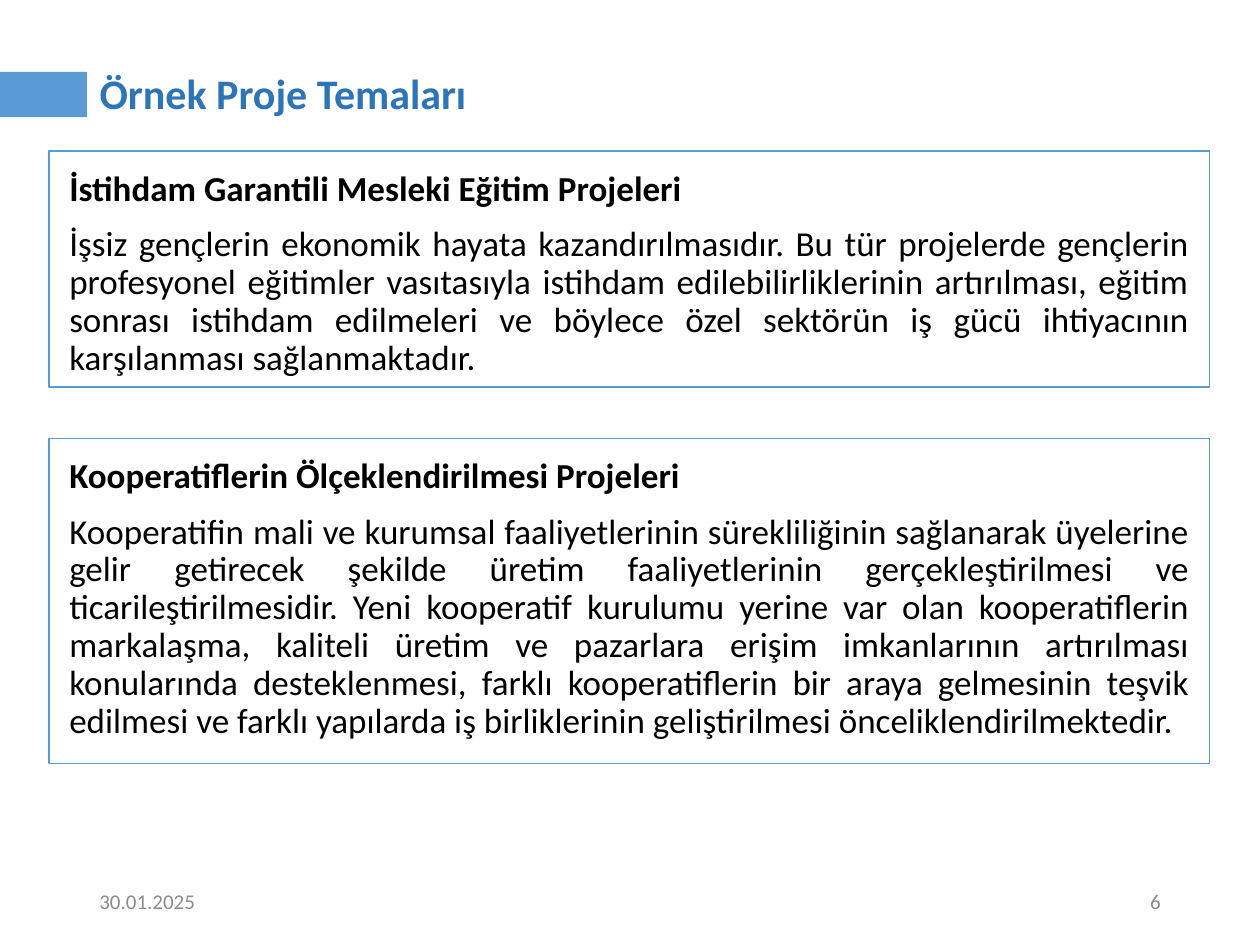
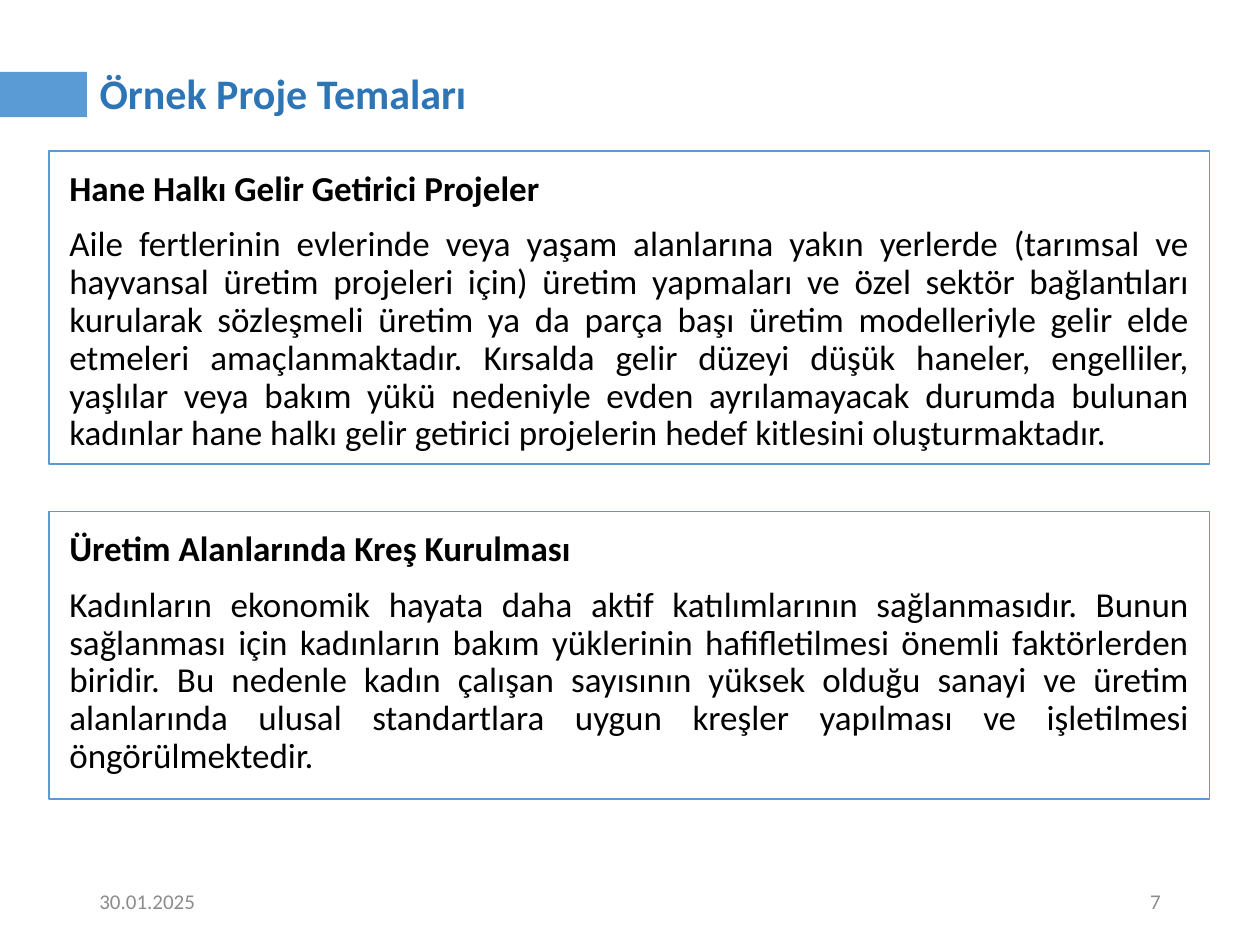
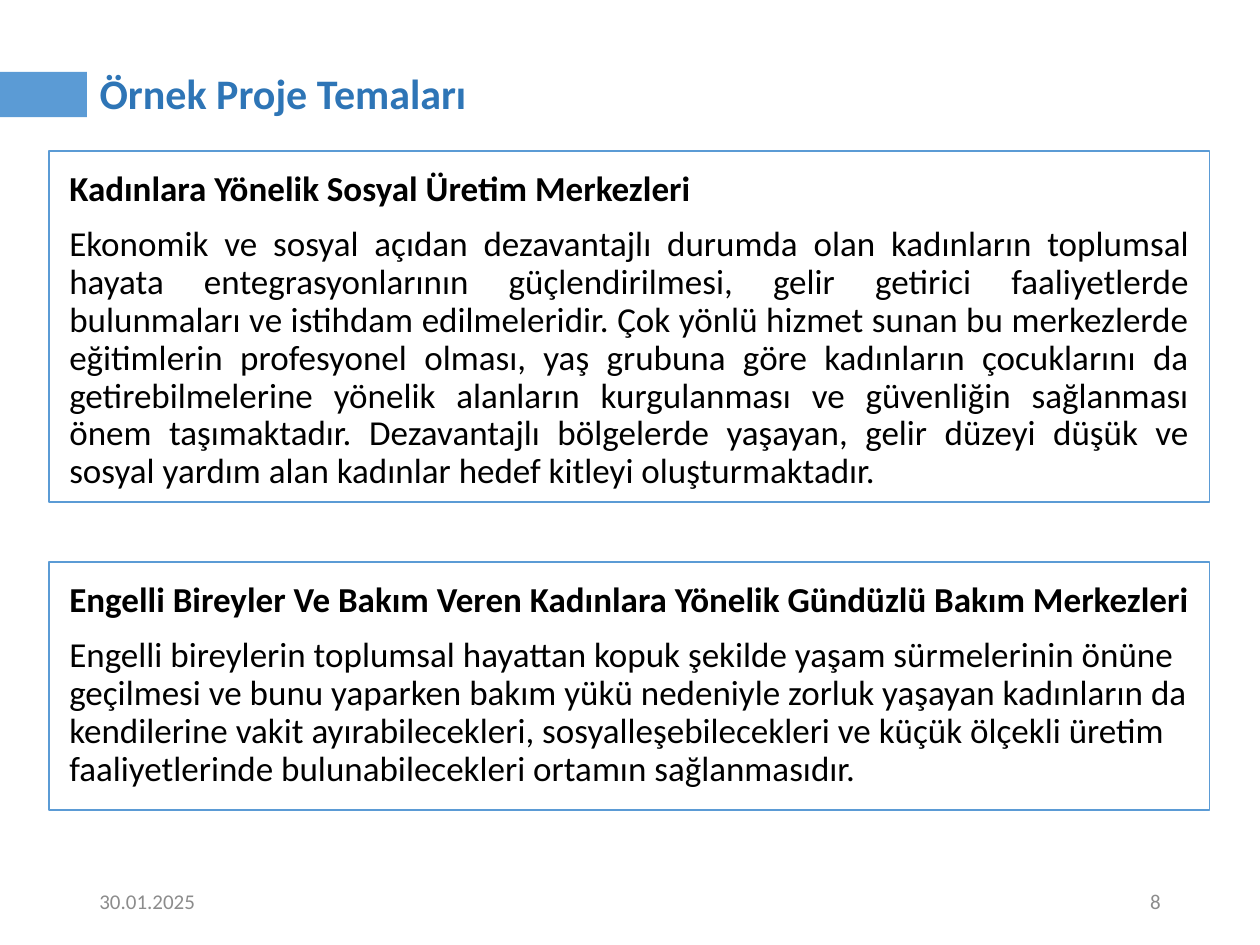
from dataclasses import dataclass

from lxml.etree import SubElement
from pptx import Presentation
from pptx.dml.color import RGBColor as RGB
from pptx.enum.shapes import MSO_SHAPE as Kind
from pptx.enum.text import MSO_ANCHOR as Anchor, MSO_AUTO_SIZE as Fit, PP_ALIGN as Align
from pptx.oxml.ns import qn
from pptx.util import Inches, Pt


@dataclass(frozen=True)
class Theme:
    font: str = "Calibri"
    blue: RGB = RGB(0x5B, 0x9B, 0xD5)
    deep: RGB = RGB(0x2E, 0x75, 0xB6)
    gray: RGB = RGB(0x8C, 0x8C, 0x8C)
    black: RGB = RGB(0, 0, 0)
    white: RGB = RGB(255, 255, 255)
    head: Pt = Pt(24)
    text: Pt = Pt(20)
    foot: Pt = Pt(12)
    inset: Inches = Inches(0.16)


LOOK = Theme()
TITLE = "Örnek Proje Temaları"
DATE = "30.01.2025"
FIRST = 6

# Each card: top, height, heading, text, alignment of the text
DECK = [
    [
        (1.2, 1.97, "İstihdam Garantili Mesleki Eğitim Projeleri",
         "İşsiz gençlerin ekonomik hayata kazandırılmasıdır. Bu tür projelerde "
         "gençlerin profesyonel eğitimler vasıtasıyla istihdam edilebilirliklerinin "
         "artırılması, eğitim sonrası istihdam edilmeleri ve böylece özel sektörün "
         "iş gücü ihtiyacının karşılanması sağlanmaktadır.", Align.JUSTIFY),
        (3.48, 2.58, "Kooperatiflerin Ölçeklendirilmesi Projeleri",
         "Kooperatifin mali ve kurumsal faaliyetlerinin sürekliliğinin sağlanarak "
         "üyelerine gelir getirecek şekilde üretim faaliyetlerinin "
         "gerçekleştirilmesi ve ticarileştirilmesidir. Yeni kooperatif kurulumu "
         "yerine var olan kooperatiflerin markalaşma, kaliteli üretim ve pazarlara "
         "erişim imkanlarının artırılması konularında desteklenmesi, farklı "
         "kooperatiflerin bir araya gelmesinin teşvik edilmesi ve farklı yapılarda "
         "iş birliklerinin geliştirilmesi önceliklendirilmektedir.", Align.JUSTIFY),
    ],
    [
        (1.2, 2.58, "Hane Halkı Gelir Getirici Projeler",
         "Aile fertlerinin evlerinde veya yaşam alanlarına yakın yerlerde (tarımsal "
         "ve hayvansal üretim projeleri için) üretim yapmaları ve özel sektör "
         "bağlantıları kurularak sözleşmeli üretim ya da parça başı üretim "
         "modelleriyle gelir elde etmeleri amaçlanmaktadır. Kırsalda gelir düzeyi "
         "düşük haneler, engelliler, yaşlılar veya bakım yükü nedeniyle evden "
         "ayrılamayacak durumda bulunan kadınlar hane halkı gelir getirici "
         "projelerin hedef kitlesini oluşturmaktadır.", Align.JUSTIFY),
        (4.06, 2.28, "Üretim Alanlarında Kreş Kurulması",
         "Kadınların ekonomik hayata daha aktif katılımlarının sağlanmasıdır. Bunun "
         "sağlanması için kadınların bakım yüklerinin hafifletilmesi önemli "
         "faktörlerden biridir. Bu nedenle kadın çalışan sayısının yüksek olduğu "
         "sanayi ve üretim alanlarında ulusal standartlara uygun kreşler yapılması "
         "ve işletilmesi öngörülmektedir.", Align.JUSTIFY),
    ],
    [
        (1.2, 2.88, "Kadınlara Yönelik Sosyal Üretim Merkezleri",
         "Ekonomik ve sosyal açıdan dezavantajlı durumda olan kadınların toplumsal "
         "hayata entegrasyonlarının güçlendirilmesi, gelir getirici faaliyetlerde "
         "bulunmaları ve istihdam edilmeleridir. Çok yönlü hizmet sunan bu "
         "merkezlerde eğitimlerin profesyonel olması, yaş grubuna göre kadınların "
         "çocuklarını da getirebilmelerine yönelik alanların kurgulanması ve "
         "güvenliğin sağlanması önem taşımaktadır. Dezavantajlı bölgelerde yaşayan, "
         "gelir düzeyi düşük ve sosyal yardım alan kadınlar hedef kitleyi "
         "oluşturmaktadır.", Align.JUSTIFY),
        (4.46, 1.97, "Engelli Bireyler Ve Bakım Veren Kadınlara Yönelik Gündüzlü "
         "Bakım Merkezleri",
         "Engelli bireylerin toplumsal hayattan kopuk şekilde yaşam sürmelerinin "
         "önüne geçilmesi ve bunu yaparken bakım yükü nedeniyle zorluk yaşayan "
         "kadınların da kendilerine vakit ayırabilecekleri, sosyalleşebilecekleri "
         "ve küçük ölçekli üretim faaliyetlerinde bulunabilecekleri ortamın "
         "sağlanmasıdır.", Align.LEFT),
    ],
]


def apply(item, **values):
    for name, value in values.items():
        setattr(item, name, value)


def place(shape, box):
    apply(shape, **dict(zip(("left", "top", "width", "height"), map(Inches, box))))


def write(para, text, size, color, bold=False, **layout):
    apply(para, **layout)
    run = para.add_run()
    run.text = text
    apply(run.font, name=LOOK.font, size=size, bold=bold)
    run.font.color.rgb = color


def add_title(slide, box):
    title = slide.shapes.title
    place(title, box)
    apply(title.text_frame, vertical_anchor=Anchor.MIDDLE, auto_size=Fit.NONE,
          word_wrap=True)
    write(title.text_frame.paragraphs[0], TITLE, LOOK.head, LOOK.deep, True,
          alignment=Align.LEFT, line_spacing=0.9)


def add_band(slide, box):
    band = slide.shapes.add_shape(Kind.RECTANGLE, *map(Inches, box))
    band.shadow.inherit = False
    band.fill.solid()
    band.fill.fore_color.rgb = LOOK.blue
    band.line.fill.background()


def add_note(slide, box, text, align):
    """Add one small grey footer text."""
    frame = slide.shapes.add_textbox(*map(Inches, box)).text_frame
    apply(frame, word_wrap=True, vertical_anchor=Anchor.MIDDLE)
    write(frame.paragraphs[0], text, LOOK.foot, LOOK.gray, alignment=align)


def fill_card(card, box, head, text, align):
    """Frame a shape and write a bold heading over a plain paragraph."""
    place(card, box)
    card.fill.solid()
    card.fill.fore_color.rgb = LOOK.white
    card.line.color.rgb = LOOK.blue
    card.line.width = Pt(1)
    frame = card.text_frame
    apply(frame, word_wrap=True, vertical_anchor=Anchor.TOP,
          auto_size=Fit.SHAPE_TO_FIT_TEXT)
    apply(frame, **{f"margin_{side}": LOOK.inset
                    for side in ("left", "top", "right", "bottom")})
    paras = frame.paragraphs[0], frame.add_paragraph()
    rows = (head, True, Align.LEFT, 0), (text, False, align, 10)
    for para, (words, bold, side, gap) in zip(paras, rows):
        props = para._p.get_or_add_pPr()
        apply_indent = {"marL": "0", "indent": "0"}
        props.attrib.update(apply_indent)
        SubElement(props, qn("a:buNone"))
        write(para, words, LOOK.text, LOOK.black, bold, alignment=side,
              line_spacing=0.9, space_before=Pt(gap), space_after=Pt(0))


def add_slide(deck, number, cards):
    slide = deck.slides.add_slide(deck.slide_layouts[1])
    add_band(slide, (0, 0.57, 0.69, 0.36))
    add_note(slide, (0.69, 6.95, 2.25, 0.4), DATE, Align.LEFT)
    add_note(slide, (7.06, 6.95, 2.25, 0.4), str(number), Align.RIGHT)
    add_title(slide, (0.69, 0.58, 5.67, 0.36))
    lower = slide.shapes.add_shape(Kind.RECTANGLE, 0, 0, 0, 0)
    lower.shadow.inherit = False
    for card, (top, high, *words) in zip((slide.placeholders[1], lower), cards):
        fill_card(card, (0.39, top, 9.21, high), *words)


def main():
    deck = Presentation()
    apply(deck, slide_width=Inches(10), slide_height=Inches(7.5))
    for number, cards in enumerate(DECK, FIRST):
        add_slide(deck, number, cards)
    deck.save("out.pptx")


if __name__ == "__main__":
    main()
